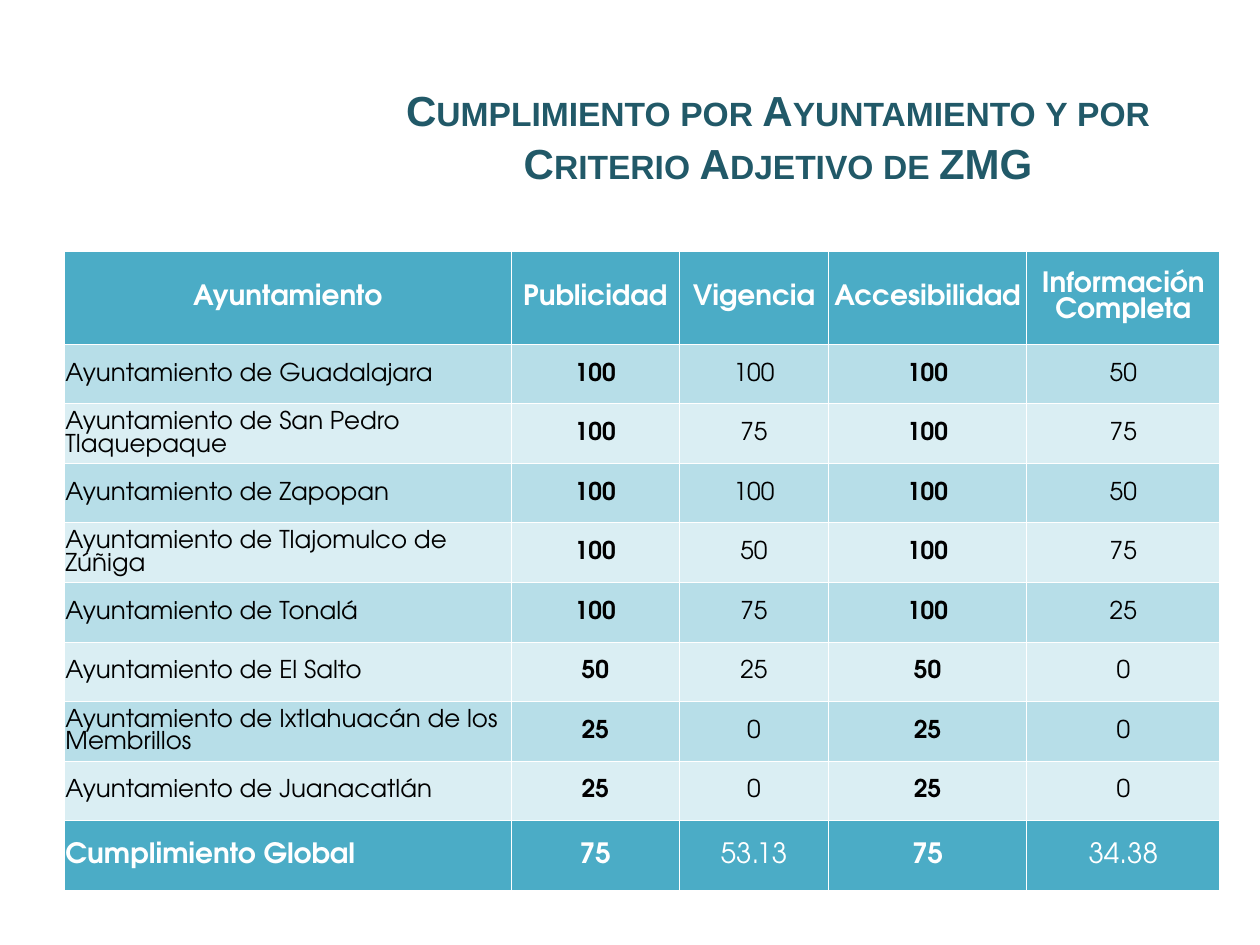
import pptx
import pptx.util
import pptx.dml.color
import pptx.enum.text
import pptx.oxml
import pptx.oxml.ns

Cm, Pt = pptx.util.Cm, pptx.util.Pt
RGB = pptx.dml.color.RGBColor.from_string
ALIGN = pptx.enum.text.PP_ALIGN
ANCHOR = pptx.enum.text.MSO_ANCHOR

TITLE = "Cumplimiento por Ayuntamiento y por Criterio Adjetivo de ZMG"
HEAD = ("Ayuntamiento", "Publicidad", "Vigencia", "Accesibilidad", "Información\vCompleta")
BODY = [
    ("Ayuntamiento de Guadalajara", 100, 100, 100, 50),
    ("Ayuntamiento de San Pedro Tlaquepaque", 100, 75, 100, 75),
    ("Ayuntamiento de Zapopan", 100, 100, 100, 50),
    ("Ayuntamiento de Tlajomulco de Zúñiga", 100, 50, 100, 75),
    ("Ayuntamiento de Tonalá", 100, 75, 100, 25),
    ("Ayuntamiento de El Salto", 50, 25, 50, 0),
    ("Ayuntamiento de Ixtlahuacán de los Membrillos", 25, 0, 25, 0),
    ("Ayuntamiento de Juanacatlán", 25, 0, 25, 0),
]
TOTAL = ("Cumplimiento Global", 75, 53.13, 75, 34.38)
ROWS = [HEAD, *BODY, TOTAL]
WIDTHS = (9, 3.4, 3, 4, 3.89)
HEIGHTS = [1.88] + [1.2] * len(BODY) + [1.41]
COLORS = {
    "title": "215968",
    "strong": "4BACC6",
    "dark": "B7DEE8",
    "light": "DAEEF3",
    "white": "FFFFFF",
    "black": "000000",
}


def add_title(slide):
    title = slide.shapes.title
    title.left, title.top, title.width, title.height = Cm(6.78), Cm(1.52), Cm(17.81), Cm(3)
    frame = title.text_frame
    frame.text = TITLE
    frame.word_wrap = True
    frame.vertical_anchor = ANCHOR.TOP
    para = frame.paragraphs[0]
    para.alignment = ALIGN.CENTER
    para.line_spacing = 1.05
    font = para.font
    font.name, font.size, font.bold = "Arial", Pt(24), True
    font.color.rgb = RGB(COLORS["title"])
    para.runs[0].font._element.set("cap", "small")


def add_lines(cell):
    props = cell._tc.get_or_add_tcPr()
    for spot, side in enumerate("LRTB"):
        line = pptx.oxml.parse_xml(
            f'<a:ln{side} {pptx.oxml.ns.nsdecls("a")} w="{Pt(0.5)}"><a:solidFill>'
            f'<a:srgbClr val="{COLORS["white"]}"/></a:solidFill></a:ln{side}>'
        )
        props.insert(spot, line)


def fill_cell(cell, value, row, col):
    edge = row in (0, len(ROWS) - 1)
    cell.text = str(value)
    cell.vertical_anchor = ANCHOR.MIDDLE
    cell.margin_left = cell.margin_right = cell.margin_top = Cm(0.02)
    cell.margin_bottom = 0
    cell.fill.solid()
    shade = "strong" if edge else "dark" if row % 2 else "light"
    cell.fill.fore_color.rgb = RGB(COLORS[shade])
    add_lines(cell)
    para = cell.text_frame.paragraphs[0]
    para.alignment = ALIGN.CENTER if row == 0 or col else ALIGN.LEFT
    font = para.font
    font.name, font.size = "TeX Gyre Adventor", Pt(16 if edge else 14)
    font.bold = row == 0 or col in (1, 3) or (edge and col == 0)
    font.color.rgb = RGB(COLORS["white" if edge else "black"])


def add_grid(slide):
    frame = slide.shapes.add_table(
        len(ROWS), len(WIDTHS), Cm(1.3), Cm(5.06), Cm(sum(WIDTHS)), Cm(sum(HEIGHTS))
    )
    table = frame.table
    for column, width in zip(table.columns, WIDTHS):
        column.width = Cm(width)
    for line, height in zip(table.rows, HEIGHTS):
        line.height = Cm(height)
    for row, values in enumerate(ROWS):
        for col, value in enumerate(values):
            fill_cell(table.cell(row, col), value, row, col)


def main():
    deck = pptx.Presentation()
    deck.slide_width, deck.slide_height = Cm(25.4), Cm(19.05)
    slide = deck.slides.add_slide(deck.slide_layouts[5])
    add_grid(slide)
    add_title(slide)
    deck.save("out.pptx")


if __name__ == "__main__":
    main()
